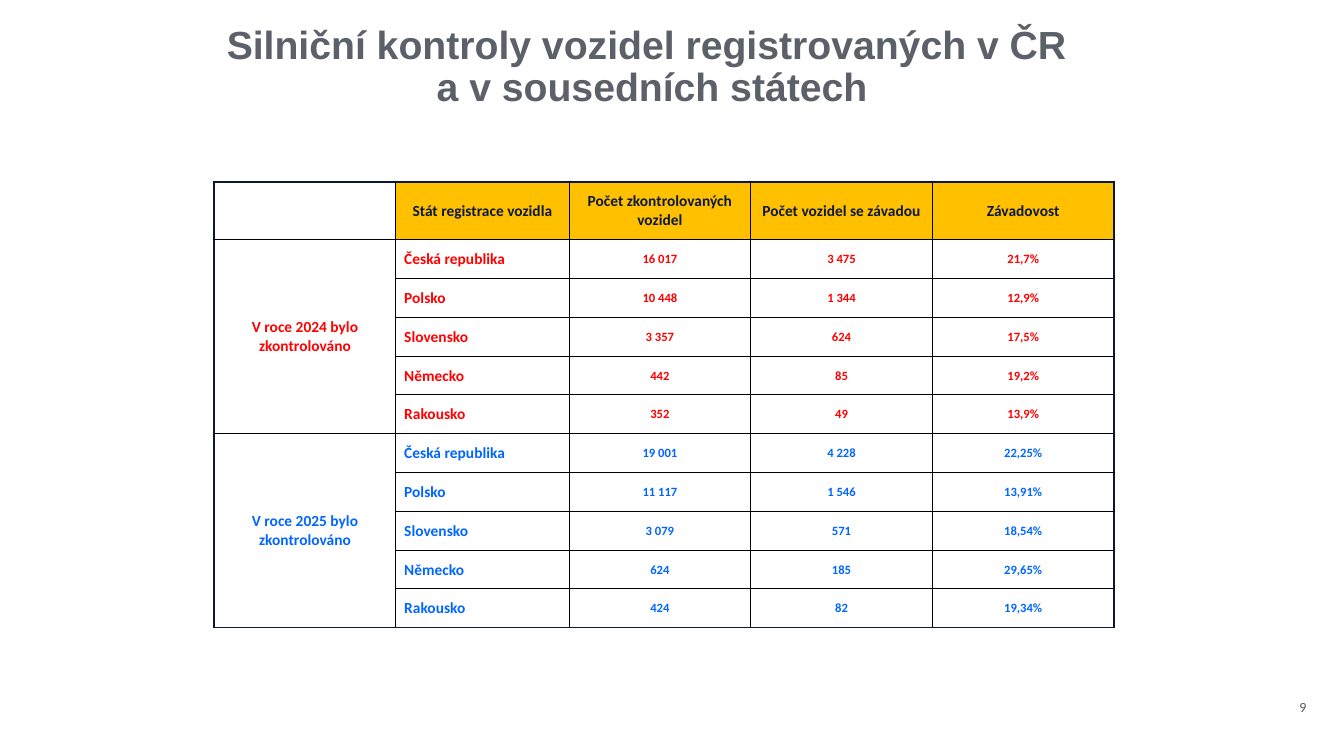
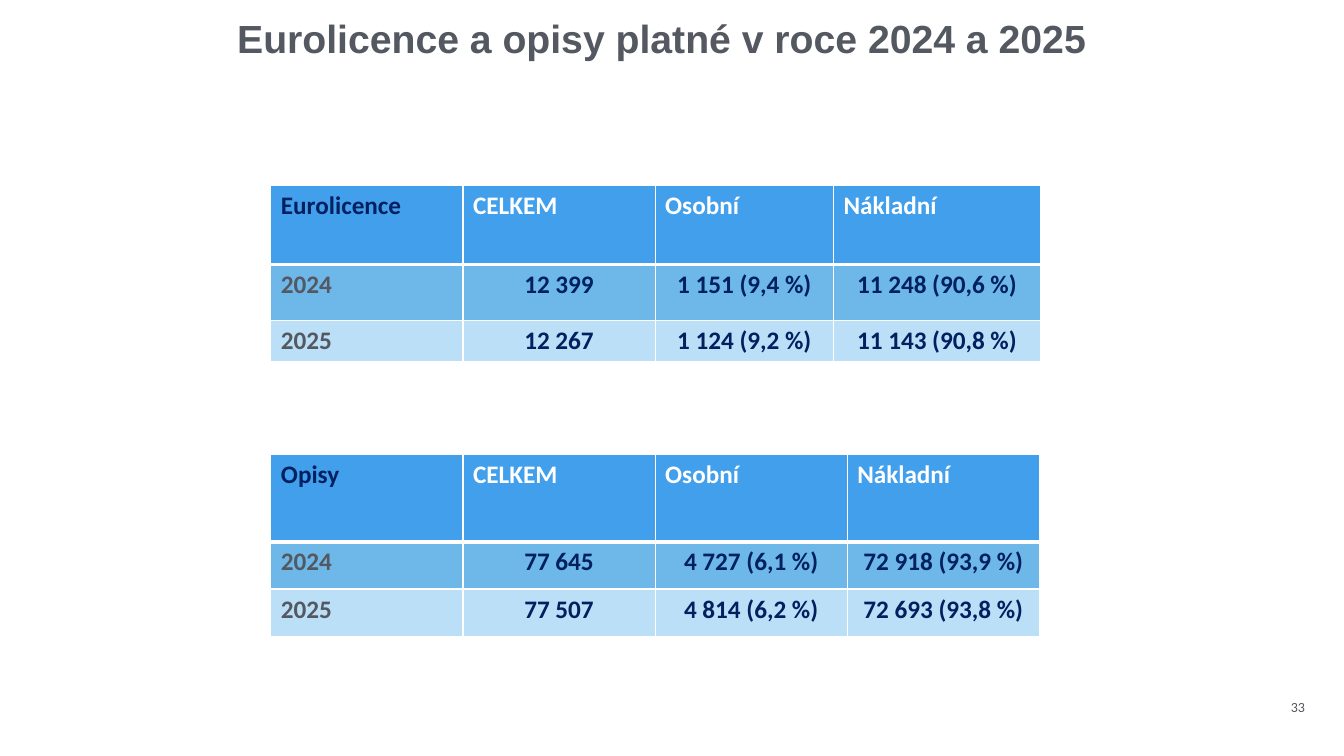
from itertools import accumulate

from lxml.etree import SubElement
from pptx import Presentation
from pptx.dml.color import RGBColor
from pptx.enum.text import MSO_ANCHOR, MSO_AUTO_SIZE, PP_ALIGN
from pptx.oxml.ns import qn
from pptx.util import Emu, Pt

PX = 9525
NO_STYLE = "{2D5ABB26-0587-4C30-8999-92F81FD0307C}"
C = {
    "title": "5C6069", "grey": "545860", "ink": "0C1838", "black": "000000",
    "white": "FFFFFF", "amber": "FFC000", "red": "FF0000", "blue": "0066FF",
    "navy": "002060", "head": "429FEC", "band": "6DB7E9", "pale": "BBDFF7",
}

prs = Presentation()
prs.slide_width, prs.slide_height = Emu(1280 * PX), Emu(720 * PX)


def add_slide(title, left, top, width, colour, number, number_width):
    s = prs.slides.add_slide(prs.slide_layouts[5])
    sp = s.shapes.title
    sp.left, sp.top, sp.width, sp.height = [Emu(v * PX) for v in (left, top, width, 76)]
    tf = sp.text_frame
    tf.text = title
    tf.margin_left = tf.margin_right = tf.margin_top = tf.margin_bottom = 0
    tf.word_wrap, tf.auto_size, tf.vertical_anchor = True, MSO_AUTO_SIZE.NONE, MSO_ANCHOR.TOP
    p = tf.paragraphs[0]
    p.alignment, p.line_spacing = PP_ALIGN.CENTER, 0.9
    p.font.name, p.font.size, p.font.bold = "Arial", Pt(28), True
    p.font.color.rgb = RGBColor.from_string(C[colour])

    box = s.shapes.add_textbox(*[Emu(v * PX) for v in (1255 - number_width, 661, number_width, 26)])
    tf = box.text_frame
    tf.text = number
    tf.word_wrap, tf.auto_size = False, MSO_AUTO_SIZE.SHAPE_TO_FIT_TEXT
    p = tf.paragraphs[0]
    p.font.name, p.font.size = "Calibri", Pt(10)
    p.font.color.rgb = RGBColor.from_string(C["grey"])
    return s


def add_grid(s, left, top, widths, heights, data, row_lines, col_lines, merges=()):
    frame = s.shapes.add_table(len(heights), len(widths), *[
        Emu(v * PX) for v in (left, top, sum(widths), sum(heights))])
    tbl = frame.table
    tbl.horz_banding = False
    tbl._tbl.tblPr.find(qn("a:tableStyleId")).text = NO_STYLE
    for column, width in zip(tbl.columns, widths):
        column.width = Emu(width * PX)
    for row, height in zip(tbl.rows, heights):
        row.height = Emu(height * PX)
    for first, last in merges:
        tbl.cell(first, 0).merge(tbl.cell(last, 0))
    for i, texts in enumerate(data):
        for j, text in enumerate(texts):
            cell = tbl.cell(i, j)
            cell.text = text
            first, last = next((m for m in merges if j == 0 and m[0] <= i <= m[1]), (i, i))
            lines = {"lnL": col_lines[j], "lnR": col_lines[j + 1],
                     "lnT": row_lines[first], "lnB": row_lines[last + 1]}
            tcPr = cell._tc.get_or_add_tcPr()
            for tag, (colour, points) in lines.items():
                ln = SubElement(tcPr, qn(f"a:{tag}"), w=str(Pt(points)))
                SubElement(SubElement(ln, qn("a:solidFill")), qn("a:srgbClr"), val=C[colour])
            p = cell.text_frame.paragraphs[0]
            p.font.name, p.font.bold = "Calibri", True
    return tbl


s = add_slide("Silniční kontroly vozidel registrovaných v ČR \va v sousedních státech",
              110, 24, 1022, "title", "9", 27)
checks = [
    ["", "Stát registrace vozidla", "Počet zkontrolovaných vozidel",
     "Počet vozidel se závadou", "Závadovost"],
    ["V roce 2024 bylo zkontrolováno", "Česká republika", "16 017", "3 475", "21,7%"],
    ["", "Polsko", "10 448", "1 344", "12,9%"],
    ["", "Slovensko", "3 357", "624", "17,5%"],
    ["", "Německo", "442", "85", "19,2%"],
    ["", "Rakousko", "352", "49", "13,9%"],
    ["V roce 2025 bylo zkontrolováno", "Česká republika", "19 001", "4 228", "22,25%"],
    ["", "Polsko", "11 117", "1 546", "13,91%"],
    ["", "Slovensko", "3 079", "571", "18,54%"],
    ["", "Německo", "624", "185", "29,65%"],
    ["", "Rakousko", "424", "82", "19,34%"],
]
outer, block, inner = ("ink", 1.5), ("black", 1), ("black", 0.5)
tbl = add_grid(s, 204, 173, [173, 165, 173, 173, 173], [55] + [37] * 10, checks,
               [outer, block] + [inner] * 4 + [block] + [inner] * 4 + [outer],
               [outer, block] + [inner] * 3 + [outer], [(1, 5), (6, 10)])
for i in range(len(checks)):
    for j in range(5):
        cell = tbl.cell(i, j)
        state = i > 0 and j == 1
        cell.vertical_anchor = MSO_ANCHOR.MIDDLE
        cell.margin_left = Emu((8 if state else 1) * PX)
        cell.margin_right = cell.margin_top = Emu(PX)
        cell.margin_bottom = 0
        if i == 0 and j > 0:
            cell.fill.solid()
            cell.fill.fore_color.rgb = RGBColor.from_string(C["amber"])
        else:
            cell.fill.background()
        p = cell.text_frame.paragraphs[0]
        p.alignment = PP_ALIGN.LEFT if state else PP_ALIGN.CENTER
        p.font.size = Pt(9 if i > 0 and j > 1 else 11)
        colour = "ink" if i == 0 else "red" if i < 6 else "blue"
        p.font.color.rgb = RGBColor.from_string(C[colour])

s = add_slide("Eurolicence a opisy platné v roce 2024 a 2025", 120, 19, 1020, "grey", "33", 35)
licences = [
    ["Eurolicence", "CELKEM", "Osobní", "Nákladní"],
    ["2024", "12 399", "1 151 (9,4 %)", "11 248 (90,6 %)"],
    ["2025", "12 267", "1 124 (9,2 %)", "11 143 (90,8 %)"],
]
copies = [
    ["Opisy", "CELKEM", "Osobní", "Nákladní"],
    ["2024", "77 645", "4 727 (6,1 %)", "72 918 (93,9 %)"],
    ["2025", "77 507", "4 814 (6,2 %)", "72 693 (93,8 %)"],
]
thin, thick = ("white", 1), ("white", 3)
for top, widths, heights, data in (
    (177, [183, 183, 170, 197], [75, 53, 39], licences),
    (433, [183] * 4, [83, 45, 45], copies),
):
    tbl = add_grid(s, 258, top, widths, heights, data, [thin, thick, thin, thin], [thin] * 5)
    for i, fill in enumerate(("head", "band", "pale")):
        for j in range(4):
            cell = tbl.cell(i, j)
            cell.fill.solid()
            cell.fill.fore_color.rgb = RGBColor.from_string(C[fill])
            p = cell.text_frame.paragraphs[0]
            p.alignment = PP_ALIGN.CENTER if i and j else PP_ALIGN.LEFT
            p.font.size = Pt(18)
            if i == 0:
                colour = "white" if j else "navy"
            else:
                colour = "navy" if j else "grey"
            p.font.color.rgb = RGBColor.from_string(C[colour])

prs.save("out.pptx")
